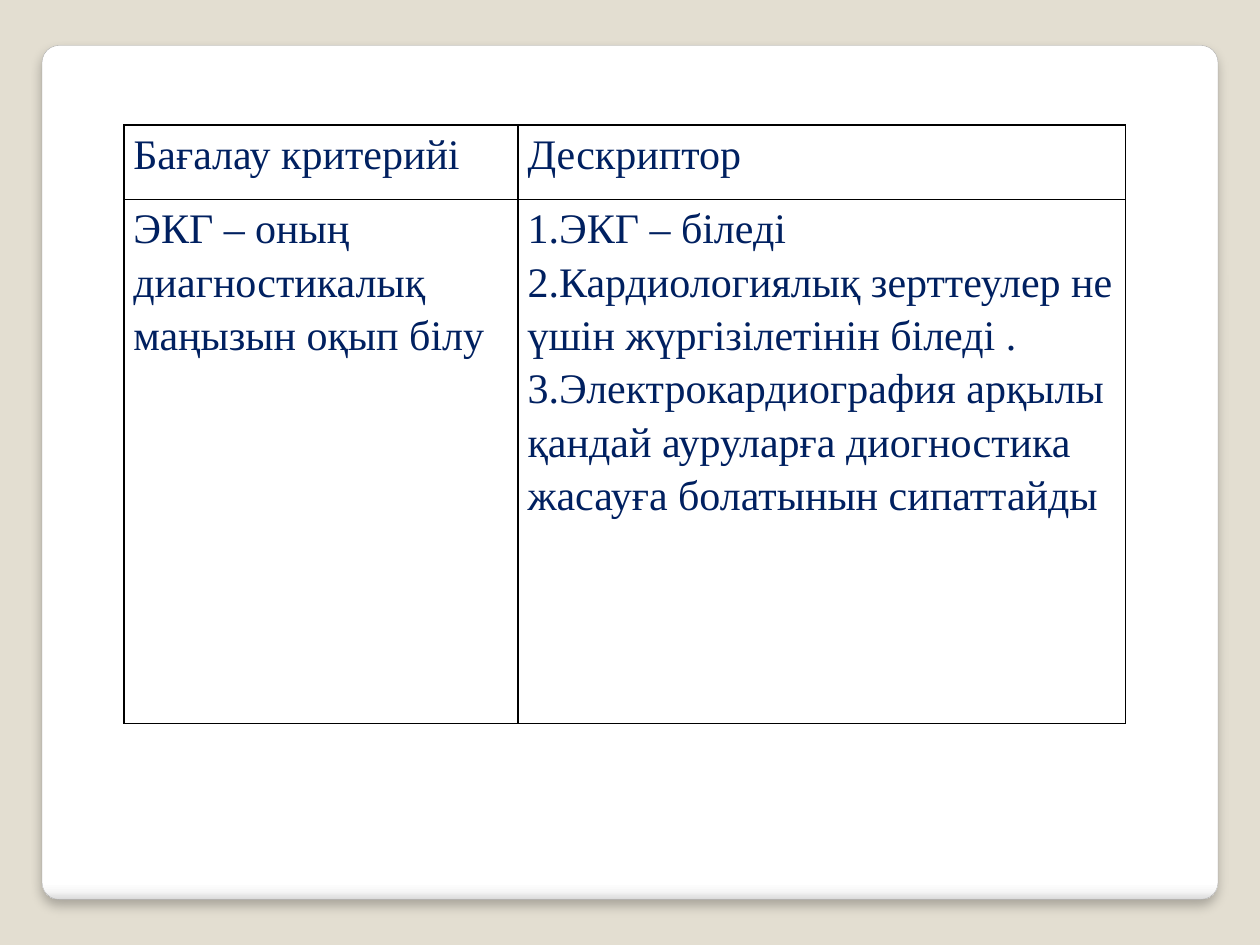
"""Build a slide with an assessment criteria table on a rounded white card."""
import pptx
import pptx.dml.color
import pptx.enum.shapes
import pptx.oxml
import pptx.oxml.ns
import pptx.util
from pptx.util import Pt

ROWS = [
    [["Бағалау критерийі"], ["Дескриптор"]],
    [
        ["ЭКГ – оның диагностикалық маңызын оқып білу"],
        [
            "1.ЭКГ – біледі",
            "2.Кардиологиялық зерттеулер не үшін жүргізілетінін біледі .",
            "3.Электрокардиография арқылы қандай ауруларға диогностика жасауға болатынын сипаттайды",
        ],
    ],
]
COL_WIDTHS = [225.3, 347]
ROW_HEIGHTS = [42.5, 299.5]
CARD_STOPS = [(0, "FFFFFF"), (98, "FFFFFF"), (99, "F7F7F7"), (100, "DADADA")]
NS = pptx.oxml.ns.nsdecls("a")


def rgb(value):
    """Return a colour from a hex string."""
    return pptx.dml.color.RGBColor.from_string(value)


def add_card(s):
    """Add the rounded card with its gradient and soft shadow."""
    sp = s.shapes.add_shape(
        pptx.enum.shapes.MSO_SHAPE.ROUNDED_RECTANGLE, Pt(24), Pt(26), Pt(672), Pt(488)
    )
    sp.adjustments[0] = 0.02
    sp.line.color.rgb = rgb("A4A4A4")
    sp.line.width = Pt(0.16)
    sp.shadow.inherit = False
    sp.fill.gradient()
    spPr = sp._element.spPr
    stops = "".join(
        f'<a:gs pos="{pos * 1000}"><a:srgbClr val="{color}"/></a:gs>' for pos, color in CARD_STOPS
    )
    gradient = pptx.oxml.parse_xml(
        f'<a:gradFill {NS} rotWithShape="1"><a:gsLst>{stops}</a:gsLst>'
        '<a:lin ang="5400000" scaled="0"/></a:gradFill>'
    )
    spPr.replace(spPr.find(pptx.oxml.ns.qn("a:gradFill")), gradient)
    spPr.find(pptx.oxml.ns.qn("a:effectLst")).append(pptx.oxml.parse_xml(
        f'<a:outerShdw {NS} blurRad="{Pt(6)}" dist="{Pt(4)}" dir="5400000" algn="t" rotWithShape="0">'
        '<a:srgbClr val="000000"><a:alpha val="25000"/></a:srgbClr></a:outerShdw>'
    ))


def write(p, text, size=24, font="Times New Roman", color="002060", spacing=1.15):
    """Write one formatted paragraph."""
    p.line_spacing = spacing
    r = p.add_run()
    r.text = text
    r.font.size = Pt(size)
    r.font.name = font
    r.font.color.rgb = rgb(color)


def fill_cell(cell, lines):
    """Set the margins, borders and paragraphs of a cell."""
    cell.margin_left = cell.margin_right = Pt(5.4)
    cell.margin_top = cell.margin_bottom = Pt(0)
    tcPr = cell._tc.get_or_add_tcPr()
    for side in "LRTB":
        tcPr.append(pptx.oxml.parse_xml(
            f'<a:ln{side} {NS} w="{Pt(1)}"><a:solidFill><a:srgbClr val="000000"/>'
            f'</a:solidFill></a:ln{side}>'
        ))
    cell.fill.background()
    tf = cell.text_frame
    for i, line in enumerate(lines):
        write(tf.add_paragraph() if i else tf.paragraphs[0], line)


def add_criteria_table(s):
    """Add the table of criteria and descriptors."""
    table = s.shapes.add_table(
        len(ROWS), len(COL_WIDTHS), Pt(70.8), Pt(71.4), Pt(sum(COL_WIDTHS)), Pt(sum(ROW_HEIGHTS))
    ).table
    table.first_row = table.horz_banding = False
    for column, width in zip(table.columns, COL_WIDTHS):
        column.width = Pt(width)
    for row, height, contents in zip(table.rows, ROW_HEIGHTS, ROWS):
        row.height = Pt(height)
        for cell, lines in zip(row.cells, contents):
            fill_cell(cell, lines)


def main():
    """Build and save the presentation."""
    prs = pptx.Presentation()
    prs.slide_width, prs.slide_height = Pt(720), Pt(540)
    s = prs.slides.add_slide(prs.slide_layouts[6])
    s.background.fill.solid()
    s.background.fill.fore_color.rgb = rgb("E3DED1")
    add_card(s)
    add_criteria_table(s)
    prs.save("out.pptx")


if __name__ == "__main__":
    main()
